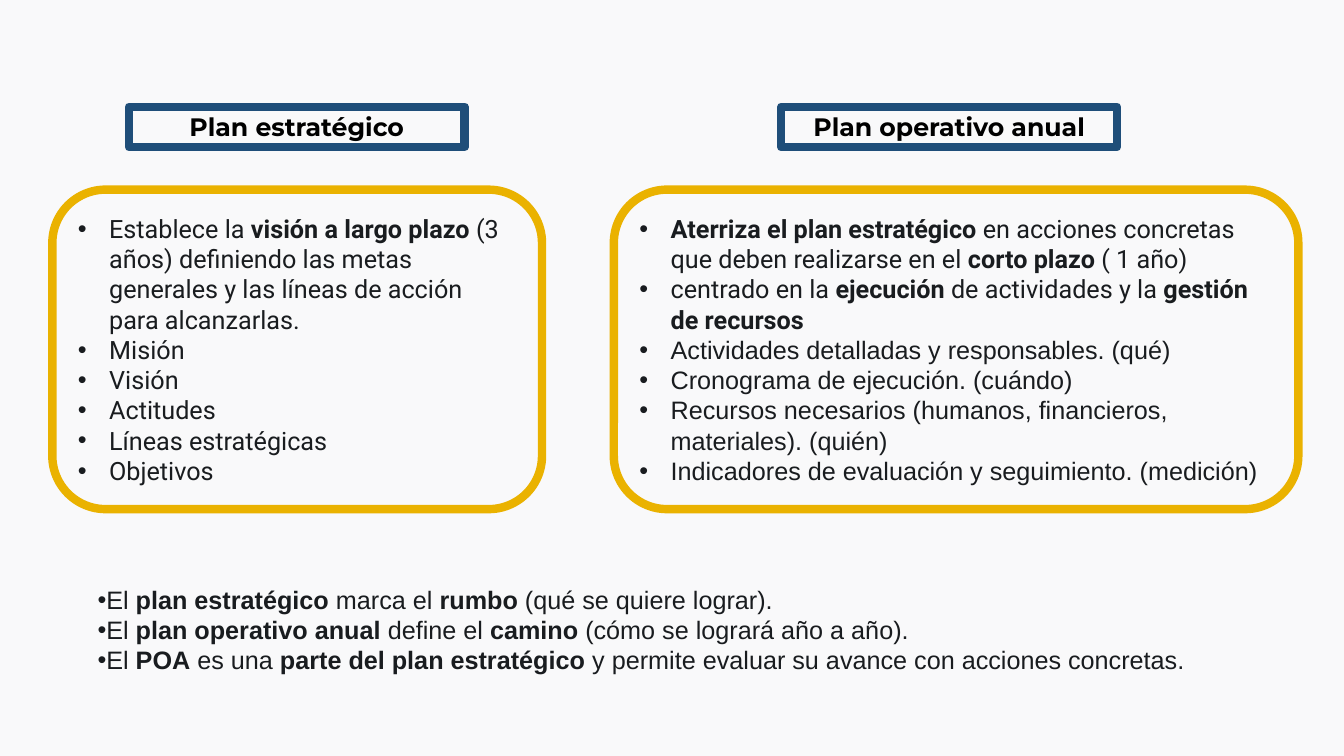
import pptx
import pptx.dml.color
import pptx.enum.shapes
import pptx.enum.text
import pptx.oxml.ns
import pptx.util
from lxml import etree
from pptx.util import Cm

BLUE, YELLOW, INK, BLACK, PAPER = "1F4E79", "EAB200", "191C1F", "000000", "F9F9FA"
HEADING_TOP, HEADING_WIDTH, HEADING_HEIGHT = Cm(2.69), Cm(8.46), Cm(1.02)
PANEL_TOP, PANEL_HEIGHT = Cm(4.78), Cm(8.05)
BULLET_INDENT = Cm(0.79)

# Each item is a font and a text whose **marked** parts are bold.
STRATEGIC_ITEMS = [
    ("Roboto", "Establece la **visión a largo plazo** (3 años) definiendo las metas "
               "generales y las líneas de acción para alcanzarlas."),
    ("Roboto", "Misión"),
    ("Roboto", "Visión"),
    ("Roboto", "Actitudes"),
    ("Roboto", "Líneas estratégicas"),
    ("Roboto", "Objetivos"),
]
OPERATIVE_ITEMS = [
    ("Roboto", "**Aterriza el plan estratégico** en acciones concretas que deben "
               "realizarse en el **corto plazo** ( 1 año)"),
    ("Roboto", "centrado en la **ejecución** de actividades y la **gestión de recursos**"),
    ("Arial", "Actividades detalladas y responsables. (qué)"),
    ("Arial", "Cronograma de ejecución. (cuándo)"),
    ("Arial", "Recursos necesarios (humanos, financieros, materiales). (quién)"),
    ("Arial", "Indicadores de evaluación y seguimiento. (medición)"),
]
CONCLUSIONS = [
    ("Arial", "El **plan estratégico** marca el **rumbo** (qué se quiere lograr)."),
    ("Arial", "El **plan operativo anual** define el **camino** (cómo se logrará año a año)."),
    ("Arial", "El **POA** es una **parte del plan estratégico** y permite evaluar su "
              "avance con acciones concretas."),
]


def rgb(hex_code):
    return pptx.dml.color.RGBColor.from_string(hex_code)


def add_marked_text(paragraph, text, font, color):
    """Add one run per part of the text; parts between ** are bold."""
    for index, part in enumerate(text.split("**")):
        if part:
            run = paragraph.add_run()
            run.text = part
            run.font.name = font
            run.font.size = pptx.util.Pt(18)
            run.font.bold = index % 2 == 1
            run.font.color.rgb = rgb(color)


def set_bullet(paragraph, indent):
    properties = paragraph._p.get_or_add_pPr()
    properties.set("marL", str(indent))
    properties.set("indent", str(-indent))
    font = etree.SubElement(properties, pptx.oxml.ns.qn("a:buFont"))
    font.set("typeface", "Arial")
    bullet = etree.SubElement(properties, pptx.oxml.ns.qn("a:buChar"))
    bullet.set("char", "•")


def fill_bullets(frame, items, indent):
    frame.word_wrap = True
    frame.vertical_anchor = pptx.enum.text.MSO_ANCHOR.MIDDLE
    for index, (font, text) in enumerate(items):
        paragraph = frame.add_paragraph() if index else frame.paragraphs[0]
        paragraph.alignment = pptx.enum.text.PP_ALIGN.LEFT
        set_bullet(paragraph, indent)
        add_marked_text(paragraph, text, font, INK)


def add_outline(slide, preset, color, left, top, width, height):
    outline = slide.shapes.add_shape(preset, left, top, width, height)
    outline.shadow.inherit = False
    outline.fill.background()
    outline.line.color.rgb = rgb(color)
    outline.line.width = pptx.util.Pt(6)
    return outline


def add_heading(slide, left, text):
    heading = add_outline(slide, pptx.enum.shapes.MSO_SHAPE.RECTANGLE, BLUE,
                          left, HEADING_TOP, HEADING_WIDTH, HEADING_HEIGHT)
    frame = heading.text_frame
    frame.word_wrap = True
    frame.auto_size = pptx.enum.text.MSO_AUTO_SIZE.SHAPE_TO_FIT_TEXT
    frame.vertical_anchor = pptx.enum.text.MSO_ANCHOR.TOP
    frame.paragraphs[0].alignment = pptx.enum.text.PP_ALIGN.CENTER
    add_marked_text(frame.paragraphs[0], f"**{text}**", "Montserrat", BLACK)


def add_panel(slide, left, width, items):
    panel = add_outline(slide, pptx.enum.shapes.MSO_SHAPE.ROUNDED_RECTANGLE, YELLOW,
                        left, PANEL_TOP, width, PANEL_HEIGHT)
    fill_bullets(panel.text_frame, items, BULLET_INDENT)


def add_conclusions(slide):
    conclusions = slide.shapes.add_textbox(Cm(2.21), Cm(14.58), Cm(30.51), Cm(2.57))
    fill_bullets(conclusions.text_frame, CONCLUSIONS, Cm(0))
    conclusions.text_frame.auto_size = pptx.enum.text.MSO_AUTO_SIZE.SHAPE_TO_FIT_TEXT


def main():
    deck = pptx.Presentation()
    deck.slide_width, deck.slide_height = Cm(33.87), Cm(19.05)
    slide = deck.slides.add_slide(deck.slide_layouts[6])
    slide.background.fill.solid()
    slide.background.fill.fore_color.rgb = rgb(PAPER)

    add_heading(slide, Cm(3.25), "Plan estratégico")
    add_heading(slide, Cm(19.69), "Plan operativo anual")
    add_panel(slide, Cm(1.32), Cm(12.34), STRATEGIC_ITEMS)
    add_conclusions(slide)
    add_panel(slide, Cm(15.47), Cm(17.25), OPERATIVE_ITEMS)
    deck.save("out.pptx")


if __name__ == "__main__":
    main()
